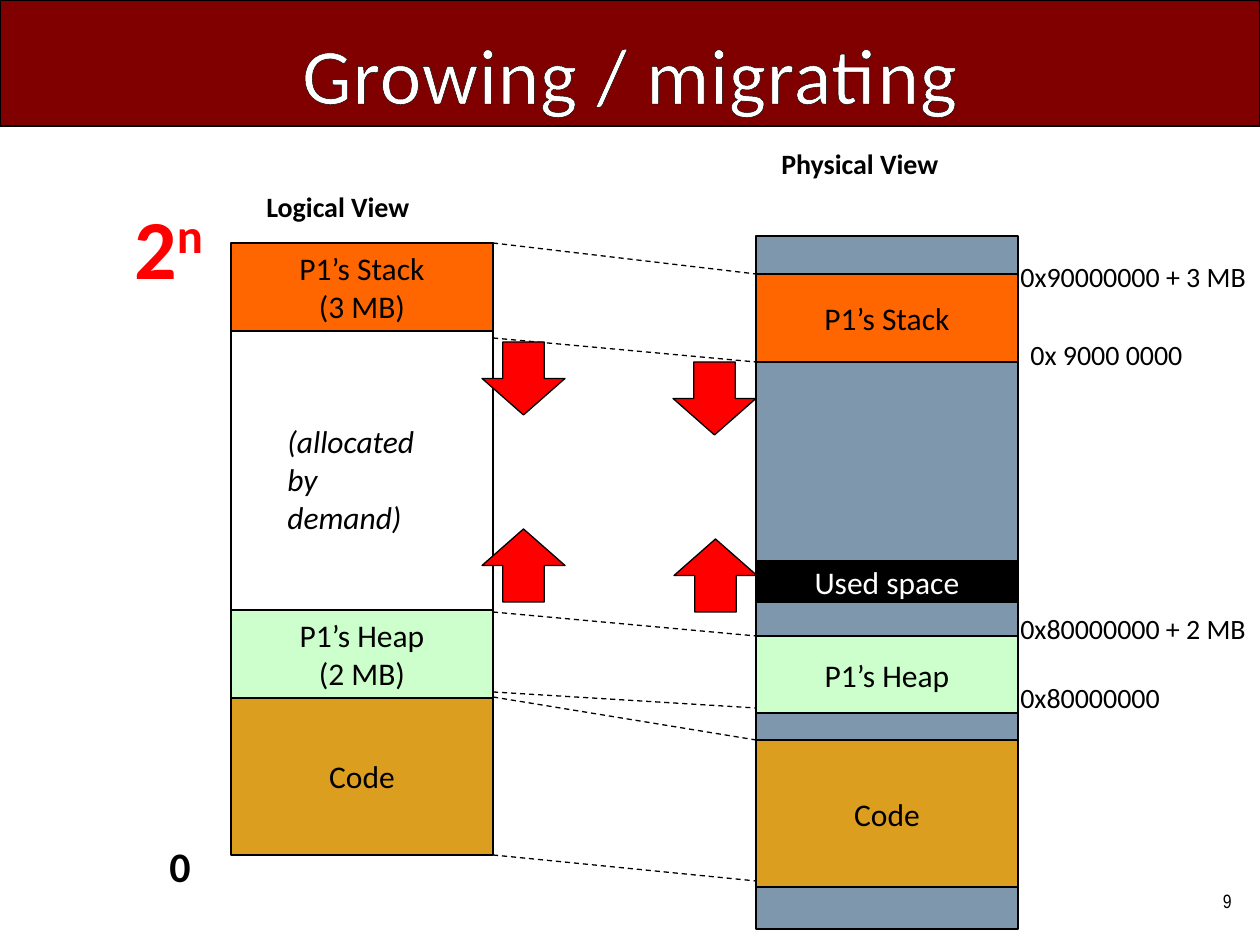
from pptx import Presentation
from pptx.dml.color import RGBColor
from pptx.enum.dml import MSO_LINE
from pptx.enum.shapes import MSO_CONNECTOR, MSO_SHAPE
from pptx.enum.text import MSO_ANCHOR, PP_ALIGN
from pptx.oxml.ns import qn
from pptx.util import Pt
from lxml.etree import SubElement

EMU_PER_PX = 914400 / 126
COLORS = {
    "maroon": "800000", "white": "FFFFFF", "black": "000000", "red": "FF0000",
    "memory": "7E97AD", "code": "DC9E1F", "heap": "CCFFCC", "stack": "FF6600",
}
LOGICAL_X, PHYSICAL_X, COLUMN_W = 231, 756, 262
LOGICAL_RIGHT = LOGICAL_X + COLUMN_W


def px(value):
    return round(value * EMU_PER_PX)


def color(name):
    return RGBColor.from_string(COLORS[name])


def style_span(span, size, ink="black", font="Calibri", bold=False, italic=False):
    span.font.name = font
    span.font.size = Pt(size)
    span.font.bold = bold
    span.font.italic = italic
    span.font.color.rgb = color(ink)


def write(box, text, size, align=PP_ALIGN.LEFT, anchor=MSO_ANCHOR.TOP, wrap=True, **style):
    frame = box.text_frame
    frame.text = text
    frame.word_wrap = wrap
    frame.vertical_anchor = anchor
    for para in frame.paragraphs:
        para.alignment = align
        for span in para.runs:
            style_span(span, size, **style)


def add_block(page, x, y, width, height, fill, kind=MSO_SHAPE.RECTANGLE):
    block = page.shapes.add_shape(kind, px(x), px(y), px(width), px(height))
    block.shadow.inherit = False
    block.fill.solid()
    block.fill.fore_color.rgb = color(fill)
    block.line.color.rgb = color("black")
    block.line.width = Pt(0.75)
    return block


def add_segment(page, x, y, height, fill, text="", ink="black"):
    """Add one memory segment as wide as its column."""
    block = add_block(page, x, y, COLUMN_W, height, fill)
    if text:
        write(block, text, 18, PP_ALIGN.CENTER, MSO_ANCHOR.MIDDLE, wrap=False, ink=ink)


def add_label(page, x, y, width, height, text, size, **style):
    label = page.shapes.add_textbox(px(x), px(y), px(width), px(height))
    write(label, text, size, **style)
    return label


def add_mapping(page, logical_y, physical_y):
    """Join a logical address to its physical address with a dashed line."""
    line = page.shapes.add_connector(
        MSO_CONNECTOR.STRAIGHT, px(LOGICAL_RIGHT), px(logical_y), px(PHYSICAL_X), px(physical_y))
    line.line.color.rgb = color("black")
    line.line.width = Pt(0.75)
    line.line.dash_style = MSO_LINE.DASH
    SubElement(line._element.spPr, qn("a:effectLst"))


def add_title(page, text):
    """Add the title bar, its letters spaced and outlined."""
    title = add_block(page, 0, 0, 1260, 126, "maroon")
    write(title, text, 45, PP_ALIGN.CENTER, MSO_ANCHOR.BOTTOM, ink="white")
    props = title.text_frame.paragraphs[0].runs[0]._r.get_or_add_rPr()
    props.set("spc", "50")
    outline = SubElement(props, qn("a:ln"), w=str(Pt(1)))
    fill = SubElement(outline, qn("a:solidFill"))
    SubElement(fill, qn("a:srgbClr"), val=COLORS["black"])
    props.insert(0, outline)


def add_top_address(page):
    """Write 2 to the power n at the top of the logical column."""
    label = add_label(page, 122, 189, 152, 115, "2", 48, ink="red", bold=True)
    power = label.text_frame.paragraphs[0].add_run()
    power.text = "n"
    style_span(power, 48, ink="red", bold=True)
    power._r.get_or_add_rPr().set("baseline", "30000")


def main():
    deck = Presentation()
    deck.slide_width, deck.slide_height = px(1260), px(945)
    page = deck.slides.add_slide(deck.slide_layouts[6])

    add_title(page, "Growing / migrating")
    add_label(page, 1108, 876, 136, 50, "9", 11, font="Arial Narrow",
              align=PP_ALIGN.RIGHT, anchor=MSO_ANCHOR.MIDDLE)

    for x, y, height, fill, text in [
        (PHYSICAL_X, 236, 693, "memory", ""),
        (LOGICAL_X, 697, 158, "code", "Code"),
        (LOGICAL_X, 610, 88, "heap", "P1’s Heap\n(2 MB)"),
        (LOGICAL_X, 243, 88, "stack", "P1’s Stack\n(3 MB)"),
        (PHYSICAL_X, 636, 77, "heap", "P1’s Heap"),
        (PHYSICAL_X, 740, 147, "code", "Code"),
        (PHYSICAL_X, 274, 88, "stack", "P1’s Stack"),
    ]:
        add_segment(page, x, y, height, fill, text)

    add_label(page, 157, 834, 60, 63, "0", 24, bold=True)
    for x, y, width, text in [
        (1008, 674, 166, "0x80000000"),
        (1008, 605, 265, "0x80000000 + 2 MB"),
        (1018, 331, 183, "0x 9000 0000"),
        (1008, 253, 260, "0x90000000 + 3 MB"),
    ]:
        add_label(page, x, y, width, 47, text, 16, wrap=False)

    for logical_y, physical_y in [(243, 274), (338, 362), (612, 636),
                                  (692, 708), (697, 740), (855, 881)]:
        add_mapping(page, logical_y, physical_y)

    add_segment(page, LOGICAL_X, 331, 279, "white")
    add_top_address(page)
    add_label(page, 254, 183, 239, 47, "Logical View", 16, bold=True)
    add_label(page, 769, 140, 239, 47, "Physical View", 16, bold=True)
    add_label(page, 275, 416, 165, 89, "(allocated\nby demand)", 18, italic=True)

    for x, y, kind in [
        (482, 342, MSO_SHAPE.DOWN_ARROW),
        (674, 539, MSO_SHAPE.UP_ARROW),
        (482, 529, MSO_SHAPE.UP_ARROW),
        (673, 362, MSO_SHAPE.DOWN_ARROW),
    ]:
        add_block(page, x, y, 83, 73, "red", kind)
    add_segment(page, PHYSICAL_X, 561, 41, "black", "Used space", "white")

    deck.save("out.pptx")


if __name__ == "__main__":
    main()
